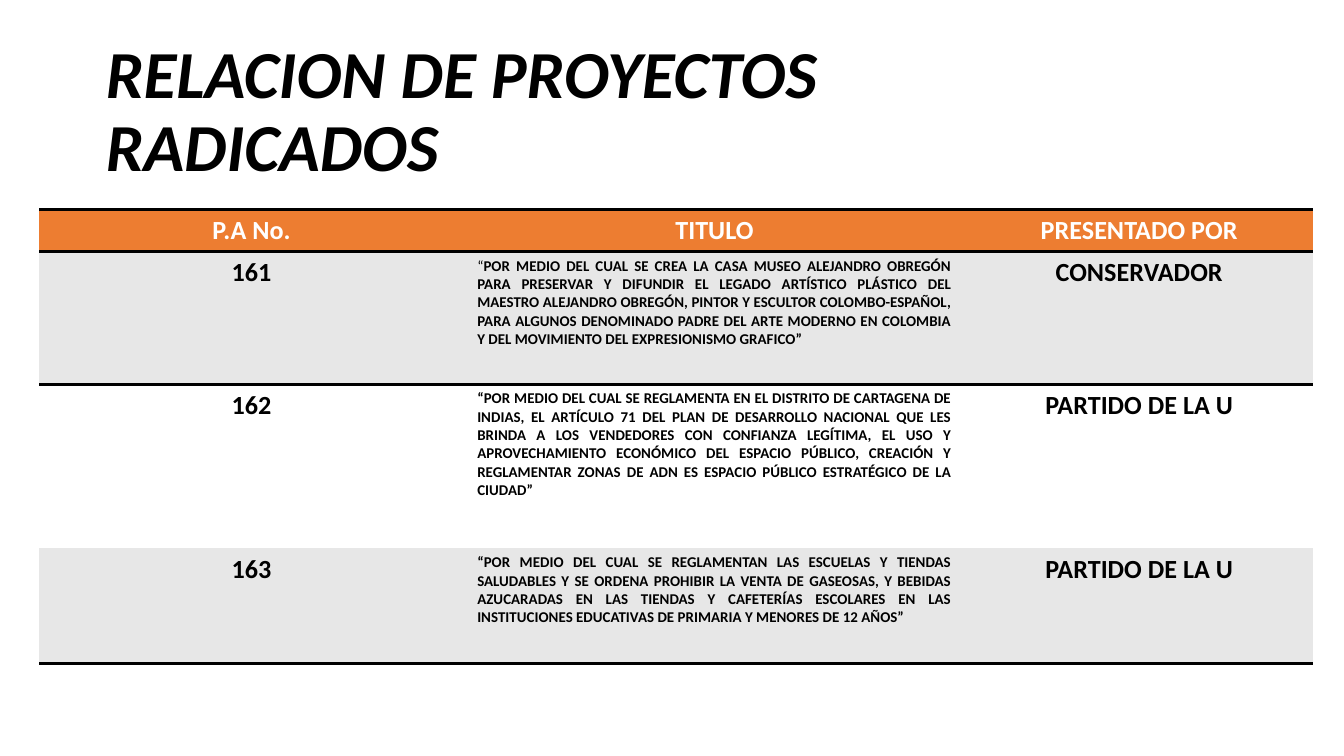
from lxml import etree
from pptx import Presentation
from pptx import util as u
from pptx.dml.color import RGBColor
from pptx.enum import text
from pptx.oxml import ns

BLACK = RGBColor(0x00, 0x00, 0x00)
WHITE = RGBColor(0xFF, 0xFF, 0xFF)
ORANGE = RGBColor(0xED, 0x7D, 0x31)
GRAY = RGBColor(0xE7, 0xE7, 0xE7)
NO_STYLE = "{2D5ABB26-0587-4C30-8999-92F81FD0307C}"
CENTER, JUSTIFY = text.PP_ALIGN.CENTER, text.PP_ALIGN.JUSTIFY

TITLE = "RELACION DE PROYECTOS \vRADICADOS"
HEADERS = ("P.A No.", "TITULO", "PRESENTADO POR")
PROJECTS = (
    ("161", "“POR MEDIO DEL CUAL SE CREA LA CASA MUSEO ALEJANDRO OBREGÓN PARA "
     "PRESERVAR Y DIFUNDIR EL LEGADO ARTÍSTICO PLÁSTICO DEL MAESTRO ALEJANDRO "
     "OBREGÓN, PINTOR Y ESCULTOR COLOMBO-ESPAÑOL, PARA ALGUNOS DENOMINADO PADRE "
     "DEL ARTE MODERNO EN COLOMBIA Y DEL MOVIMIENTO DEL EXPRESIONISMO GRAFICO”",
     "CONSERVADOR"),
    ("162", "“POR MEDIO DEL CUAL SE REGLAMENTA EN EL DISTRITO DE CARTAGENA DE "
     "INDIAS, EL ARTÍCULO 71 DEL PLAN DE DESARROLLO NACIONAL QUE LES BRINDA A LOS "
     "VENDEDORES CON CONFIANZA LEGÍTIMA, EL USO Y APROVECHAMIENTO ECONÓMICO DEL "
     "ESPACIO PÚBLICO, CREACIÓN Y REGLAMENTAR ZONAS DE ADN ES ESPACIO PÚBLICO "
     "ESTRATÉGICO DE LA CIUDAD”", "PARTIDO DE LA U"),
    ("163", "“POR MEDIO DEL CUAL SE REGLAMENTAN LAS ESCUELAS Y TIENDAS SALUDABLES "
     "Y SE ORDENA PROHIBIR LA VENTA DE GASEOSAS, Y BEBIDAS AZUCARADAS EN LAS "
     "TIENDAS Y CAFETERÍAS ESCOLARES EN LAS INSTITUCIONES EDUCATIVAS DE PRIMARIA "
     "Y MENORES DE 12 AÑOS”", "PARTIDO DE LA U"),
)
COLUMN_WIDTHS = (8.03, 9.47, 6.58)
ROW_HEIGHTS = (0.76, 2.51, 3.1, 2.18)


def apply(target, values):
    """Set each attribute of the target from a dict of values."""
    for name, value in values.items():
        setattr(target, name, value)


def format_font(font, size, color, italic=False):
    """Give a font the bold Calibri look of the slide."""
    apply(font, {"name": "Calibri", "size": u.Pt(size), "bold": True, "italic": italic})
    font.color.rgb = color


def add_title(slide):
    """Add the two-line slide title."""
    shape = slide.shapes.add_textbox(u.Cm(1.75), u.Cm(0.76), u.Cm(21.9), u.Cm(2.77))
    frame = shape.text_frame
    apply(frame, {"word_wrap": True, "vertical_anchor": text.MSO_ANCHOR.MIDDLE})
    paragraph = frame.paragraphs[0]
    paragraph.text = TITLE
    paragraph.line_spacing = 0.9
    format_font(paragraph.font, 36, BLACK, italic=True)
    for run in paragraph.runs:
        format_font(run.font, 36, BLACK, italic=True)


def add_borders(cell, sides):
    """Draw black rules on the given sides of a cell."""
    properties = cell._tc.get_or_add_tcPr()
    for index, side in enumerate(sides):
        line = etree.Element(ns.qn(f"a:ln{side}"), w=str(u.Pt(2)))
        fill = etree.SubElement(line, ns.qn("a:solidFill"))
        etree.SubElement(fill, ns.qn("a:srgbClr"), val=str(BLACK))
        properties.insert(index, line)


def fill_cell(cell, wording, background, color, size, alignment):
    """Write and format one table cell."""
    apply(cell, {"margin_left": u.Cm(0.25), "margin_right": u.Cm(0.25),
                 "margin_top": u.Cm(0.1), "margin_bottom": u.Cm(0.1)})
    cell.fill.solid()
    cell.fill.fore_color.rgb = background
    paragraph = cell.text_frame.paragraphs[0]
    paragraph.alignment = alignment
    run = paragraph.add_run()
    run.text = wording
    format_font(run.font, size, color)


def add_projects_table(slide):
    """Add the table of filed projects."""
    rows = (HEADERS, *PROJECTS)
    table = slide.shapes.add_table(
        len(rows), len(HEADERS), u.Cm(0.74), u.Cm(3.96),
        u.Cm(sum(COLUMN_WIDTHS)), u.Cm(sum(ROW_HEIGHTS))).table
    table._tbl.tblPr.find(ns.qn("a:tableStyleId")).text = NO_STYLE
    table.horz_banding = False
    for column, width in zip(table.columns, COLUMN_WIDTHS):
        column.width = u.Cm(width)
    sides = ("TB", "T", "", "B")
    for row_index, (row, height) in enumerate(zip(rows, ROW_HEIGHTS)):
        table.rows[row_index].height = u.Cm(height)
        header = row_index == 0
        background = ORANGE if header else GRAY if row_index % 2 else WHITE
        for column_index, wording in enumerate(row):
            cell = table.cell(row_index, column_index)
            description = column_index == 1 and not header
            fill_cell(cell, wording, background, WHITE if header else BLACK,
                      8 if description else 14, JUSTIFY if description else CENTER)
            add_borders(cell, sides[row_index])
    table.cell(1, 1).text_frame.paragraphs[0].runs[0].text = PROJECTS[0][1][1:]
    unbold_opening_quote(table.cell(1, 1).text_frame.paragraphs[0])


def unbold_opening_quote(paragraph):
    """Put a regular-weight opening quote before the bold wording."""
    quote = paragraph.add_run()
    quote.text = "“"
    format_font(quote.font, 8, BLACK)
    quote.font.bold = False
    paragraph.runs[0]._r.addprevious(quote._r)


def main():
    """Build and save the slide."""
    presentation = Presentation()
    apply(presentation, {"slide_width": u.Cm(25.4), "slide_height": u.Cm(14.29)})
    slide = presentation.slides.add_slide(presentation.slide_layouts[6])
    add_title(slide)
    add_projects_table(slide)
    presentation.save("out.pptx")


if __name__ == "__main__":
    main()
